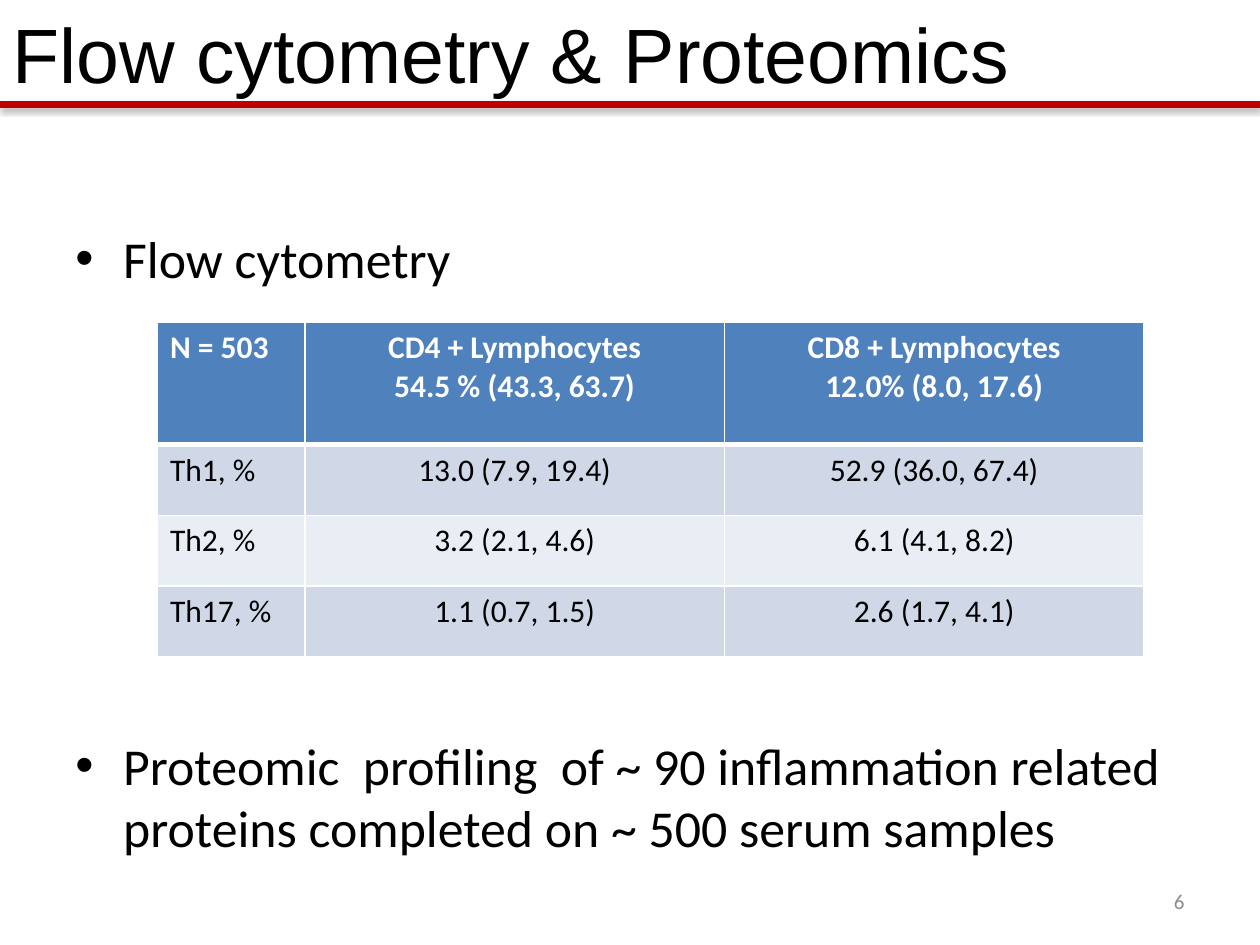
from lxml import etree
from pptx import Presentation, util as u
from pptx.dml.color import RGBColor
from pptx.enum import shapes, text
from pptx.oxml import ns

LEFT, MID, RIGHT = text.PP_ALIGN.LEFT, text.PP_ALIGN.CENTER, text.PP_ALIGN.RIGHT
ROWS = [
    ("N = 503", "CD4 + Lymphocytes\n54.5 % (43.3, 63.7)", "CD8 + Lymphocytes\n12.0% (8.0, 17.6)"),
    ("Th1, %", "13.0 (7.9, 19.4)", "52.9 (36.0, 67.4)"),
    ("Th2, %", "3.2 (2.1, 4.6)", "6.1 (4.1, 8.2)"),
    ("Th17, %", "1.1 (0.7, 1.5)", "2.6 (1.7, 4.1)"),
]


def color(hex):
    return RGBColor.from_string(hex)


def node(root, tag, **attrs):
    return etree.SubElement(root, ns.qn(tag), {k: str(v) for k, v in attrs.items()})


def style(frame, size, hue, font="Calibri", bold=False, align=LEFT):
    for para in frame.paragraphs:
        para.alignment = align
        form = {"size": u.Pt(size), "name": font, "bold": bold}
        for run in para.runs:
            for key, val in form.items():
                setattr(run.font, key, val)
            run.font.color.rgb = color(hue)


def add_text(slide, box, words, size, hue, anchor=text.MSO_ANCHOR.TOP, **form):
    frame = slide.shapes.add_textbox(*map(u.Inches, box)).text_frame
    frame.word_wrap = True
    frame.vertical_anchor = anchor
    frame.text = words
    style(frame, size, hue, **form)
    return frame


def add_list(slide, box, items, gap):
    frame = add_text(slide, box, "\n".join(items), 29.6, "000000")
    for para in frame.paragraphs:
        props = para._p.get_or_add_pPr()
        props.set("marL", str(u.Inches(0.38)))
        props.set("indent", str(u.Inches(-0.38)))
        node(props, "a:buFont", typeface="Arial")
        node(props, "a:buChar", char="•")
    for para in frame.paragraphs[1:]:
        para.space_before = u.Pt(gap)


def add_rule(slide, top, hue, width):
    rule = slide.shapes.add_connector(
        shapes.MSO_CONNECTOR.STRAIGHT, 0, u.Inches(top), u.Inches(10), u.Inches(top))
    rule.line.color.rgb = color(hue)
    rule.line.width = u.Pt(width)
    glow = node(node(rule._element.spPr, "a:effectLst"), "a:outerShdw",
                blurRad=u.Pt(3.1), dist=u.Pt(1.6), dir=5400000, rotWithShape=0)
    node(node(glow, "a:srgbClr", val="000000"), "a:alpha", val=38000)


def add_edges(cell, hue, **widths):
    props = cell._tc.get_or_add_tcPr()
    for side in "LRTB":
        line = node(props, f"a:ln{side}", w=u.Pt(widths.get(side, 1)))
        node(node(line, "a:solidFill"), "a:srgbClr", val=hue)


def add_grid(slide, box, rows, wide, high):
    grid = slide.shapes.add_table(len(rows), len(wide), *map(u.Inches, box)).table
    for col, size in zip(grid.columns, wide):
        col.width = u.Inches(size)
    for row, size in zip(grid.rows, high):
        row.height = u.Inches(size)
    for r, row in enumerate(rows):
        head = r == 0
        fill = "4F81BD" if head else ("E9EDF4", "D0D8E8")[r % 2]
        thick = {0: {"B": 3}, 1: {"T": 3}}.get(r, {})
        for c, words in enumerate(row):
            cell = grid.cell(r, c)
            cell.text = words
            style(cell.text_frame, 18, "FFFFFF" if head else "000000",
                  bold=head, align=MID if c else LEFT)
            add_edges(cell, "FFFFFF", **thick)
            cell.fill.solid()
            cell.fill.fore_color.rgb = color(fill)


def main():
    deck = Presentation()
    deck.slide_width, deck.slide_height = u.Inches(10), u.Inches(7.5)
    slide = deck.slides.add_slide(deck.slide_layouts[6])
    add_text(slide, (0, 0, 10, 0.84), "Flow cytometry & Proteomics", 44, "000000", font="Arial")
    add_rule(slide, 0.83, "C00000", 4)
    add_list(slide, (0.5, 1.75, 9, 4.95), [
        "Flow cytometry",
        "Proteomic  profiling  of ~ 90 inflammation related proteins "
        "completed on ~ 500 serum samples",
    ], 254)
    add_text(slide, (7.17, 6.95, 2.33, 0.4), "6", 12, "8C8C8C",
             anchor=text.MSO_ANCHOR.MIDDLE, align=RIGHT)
    add_grid(slide, (1.25, 2.56, 7.83, 2.65), ROWS, (1.17, 3.33, 3.33), (0.97, 0.56, 0.56, 0.56))
    deck.save("out.pptx")


if __name__ == "__main__":
    main()
